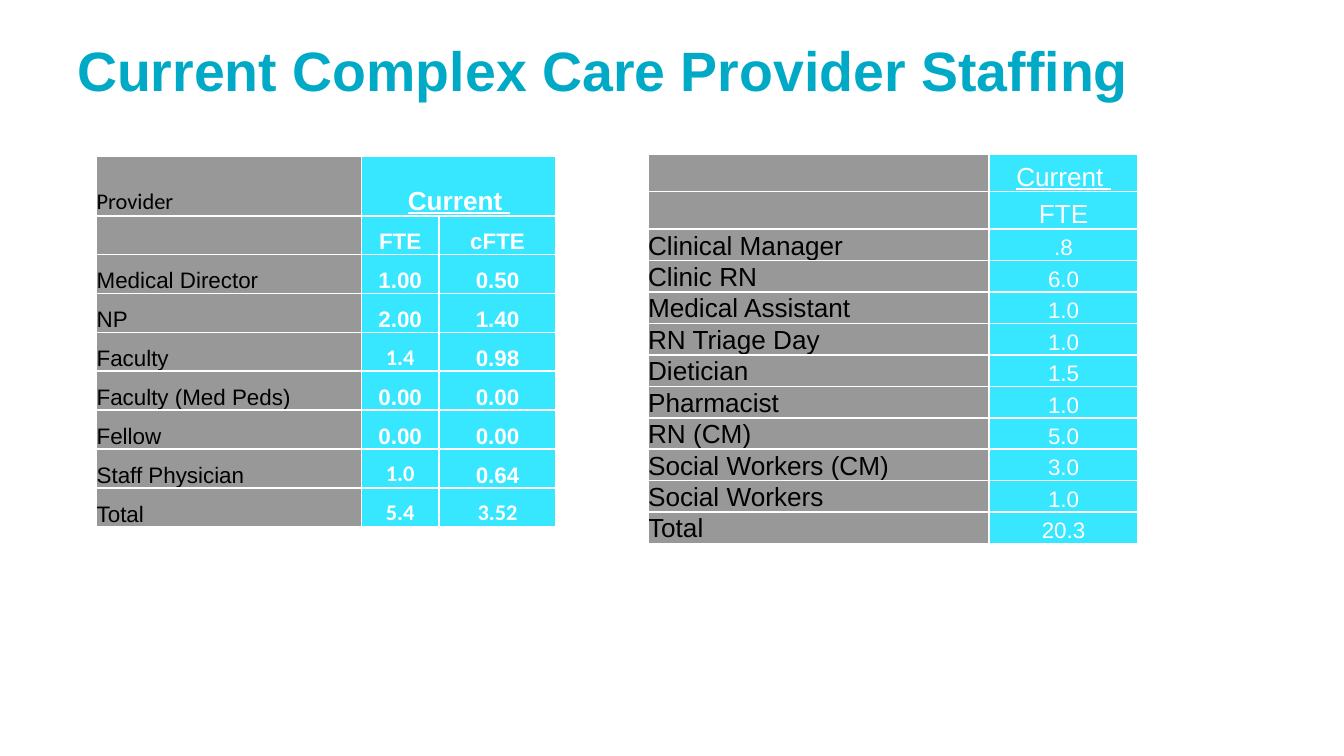
from pptx import Presentation
from pptx.dml.color import RGBColor
from pptx.enum import text
from pptx.oxml import parse_xml
from pptx.util import Pt

NS = "http://schemas.openxmlformats.org/drawingml/2006/main"


def paint(hue):
    return RGBColor.from_string(hue)


def style(para, size, hue, bold, face="Arial"):
    font = para.font
    font.size, font.bold, font.name = Pt(size), bold, face
    font.color.rgb = paint(hue)


deck = Presentation()
deck.slide_width, deck.slide_height = Pt(720), Pt(405)
slide = deck.slides.add_slide(deck.slide_layouts[6])

box = slide.shapes.add_textbox(Pt(36), Pt(16.5), Pt(648), Pt(67.5))
frame = box.text_frame
frame.word_wrap = True
frame.margin_left = frame.margin_right = Pt(5.3)
frame.margin_top = frame.margin_bottom = Pt(2.6)
frame.text = "Current Complex Care Provider Staffing"
style(frame.paragraphs[0], 29.7, "00AAC7", True)

doctors = [
    ("Provider", "Current ", ""),
    ("", "FTE", "cFTE"),
    ("Medical Director", "1.00", "0.50"),
    ("NP", "2.00", "1.40"),
    ("Faculty", "1.4", "0.98"),
    ("Faculty (Med Peds)", "0.00", "0.00"),
    ("Fellow", "0.00", "0.00"),
    ("Staff Physician", "1.0", "0.64"),
    ("Total", "5.4", "3.52"),
]
staff = [
    ("", "Current "),
    ("", "FTE"),
    ("Clinical Manager", ".8"),
    ("Clinic RN", "6.0"),
    ("Medical Assistant", "1.0"),
    ("RN Triage Day", "1.0"),
    ("Dietician", "1.5"),
    ("Pharmacist", "1.0"),
    ("RN (CM)", "5.0"),
    ("Social Workers (CM)", "3.0"),
    ("Social Workers", "1.0"),
    ("Total", "20.3"),
]
light = {"Provider", "1.4", "1.0", "5.4", "3.52"}

tables = [
    (doctors, 51.8, 83.6, [141.8, 41.6, 62.8], [32] + [20.85] * 8, True, 12, 12),
    (staff, 347.2, 82.6, [182.6, 80], [20.1] * 2 + [15.9] * 10, False, 14, 14),
]
for data, left, top, wides, highs, bold, label, head in tables:
    grid = slide.shapes.add_table(
        len(data), len(wides), Pt(left), Pt(top), Pt(sum(wides)), Pt(sum(highs))
    ).table
    for col, wide in zip(grid.columns, wides):
        col.width = Pt(wide)
    for row, high in zip(grid.rows, highs):
        row.height = Pt(high)
    for r, line in enumerate(data):
        for c, word in enumerate(line):
            cell = grid.cell(r, c)
            cell.margin_left = cell.margin_right = 0
            cell.margin_top = cell.margin_bottom = 0
            cell.vertical_anchor = text.MSO_ANCHOR.BOTTOM
            props = cell._tc.get_or_add_tcPr()
            for side in ("lnL", "lnR", "lnT", "lnB"):
                props.append(parse_xml(
                    f'<a:{side} xmlns:a="{NS}" w="12700"><a:solidFill>'
                    f'<a:srgbClr val="FFFFFF"/></a:solidFill></a:{side}>'
                ))
            cell.fill.solid()
            cell.fill.fore_color.rgb = paint("37E6FF" if c else "989898")
            cell.text = word
            para = cell.text_frame.paragraphs[0]
            size = 14 if r == 0 and c else head if r < 2 else 12 if c else label
            face = "Calibri" if bold and word in light else "Arial"
            style(para, size, "FFFFFF" if c else "000000", bold and c > 0, face)
            para.font.underline = word == "Current "
            if c:
                para.alignment = text.PP_ALIGN.CENTER
    if len(wides) == 3:
        grid.cell(0, 1).merge(grid.cell(0, 2))

deck.save("out.pptx")
